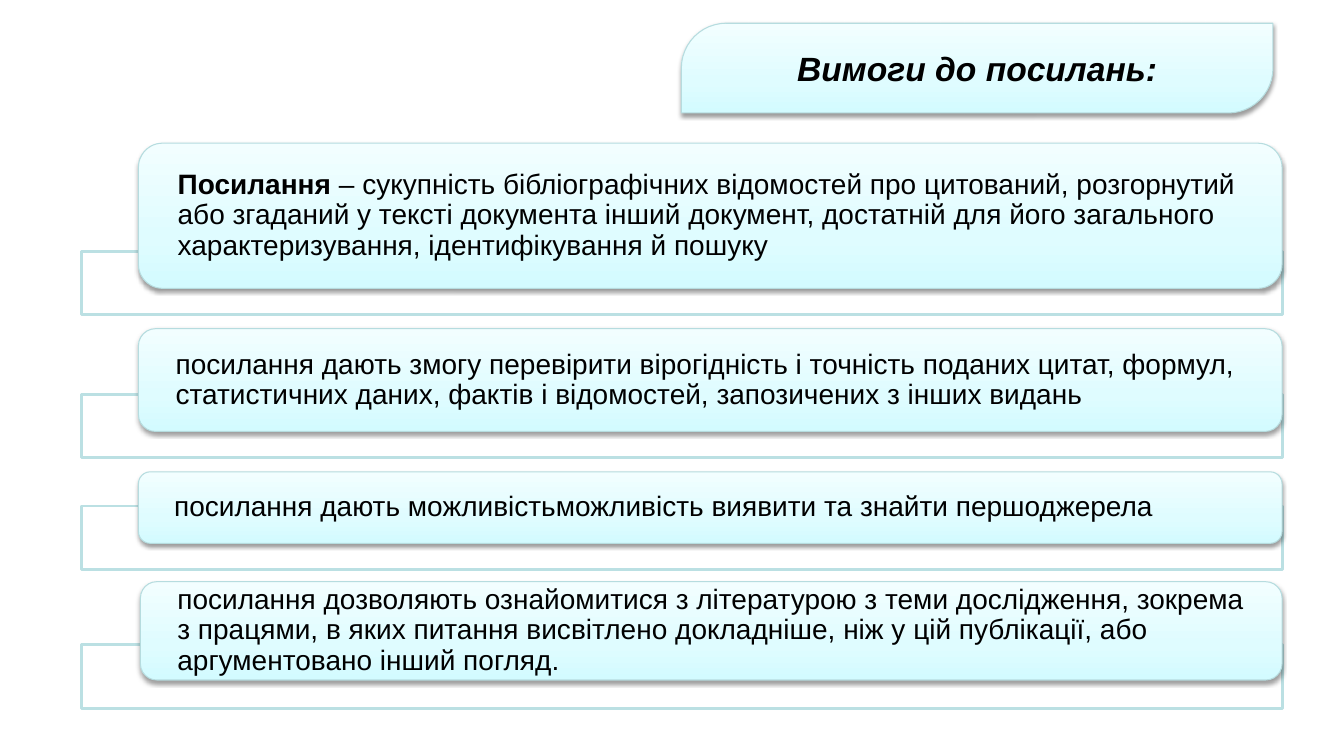
from dataclasses import dataclass

from lxml.etree import SubElement
from pptx import Presentation
from pptx.dml.color import RGBColor
from pptx.enum.shapes import MSO_SHAPE
from pptx.enum.text import MSO_ANCHOR, PP_ALIGN
from pptx.oxml.ns import qn
from pptx.util import Pt


@dataclass(frozen=True)
class Theme:
    font: str = "Arial"
    title_size: float = 24
    body_size: float = 20
    text: str = "000000"
    frame_fill: str = "FFFFFF"
    frame_line: str = "BBE0E3"
    card_line: str = "B6DCDF"
    # Gradient stops from bottom to top: percent and colour
    gradient: tuple = ((0, "D3FBFF"), (35, "DFFCFF"), (100, "F2FEFF"))


THEME = Theme()

TITLE = "Вимоги до посилань:"

# Each card: height, shift from its stacked place (x, y), runs (text, bold)
CARDS = [
    (103.7, (0, 0), [
        ("Посилання", True),
        (" – сукупність бібліографічних відомостей про цитований, розгорнутий "
         "або згаданий у тексті документа інший документ, достатній для його "
         "загального характеризування, ідентифікування й пошуку", False)]),
    (73.4, (0, 0), [
        ("посилання дають змогу перевірити вірогідність і точність поданих цитат, "
         "формул, статистичних даних, фактів і відомостей, запозичених з інших "
         "видань", False)]),
    (51.1, (0, 0), [
        ("посилання дають можливістьможливість виявити та знайти першоджерела",
         False)]),
    (70.2, (1.4, -1.4), [
        ("посилання дозволяють ознайомитися з літературою з теми дослідження, "
         "зокрема з працями, в яких питання висвітлено докладніше, ніж у цій "
         "публікації, або аргументовано інший погляд.", False)]),
]


def add_outlined(slide, kind, box, line_color, line_width):
    shape = slide.shapes.add_shape(kind, *(Pt(length) for length in box))
    shape.shadow.inherit = False
    shape.line.color.rgb = RGBColor.from_string(line_color)
    shape.line.width = Pt(line_width)
    return shape


def add_glossy(slide, kind, box):
    """Add a shape with the pale vertical gradient and a soft shadow below."""
    shape = add_outlined(slide, kind, box, THEME.card_line, 0.75)
    shape.fill.gradient()
    shape.fill.gradient_angle = 90
    properties = shape._element.spPr

    stops = properties.find(qn("a:gradFill")).find(qn("a:gsLst"))
    for stop in list(stops):
        stops.remove(stop)
    for percent, color in THEME.gradient:
        stop = SubElement(stops, qn("a:gs"), pos=str(percent * 1000))
        SubElement(stop, qn("a:srgbClr"), val=color)

    shadow = SubElement(properties.find(qn("a:effectLst")), qn("a:outerShdw"),
                        blurRad=str(Pt(3.1)), dist=str(Pt(1.6)),
                        dir="5400000", rotWithShape="0")
    shadow_color = SubElement(shadow, qn("a:srgbClr"), val="000000")
    SubElement(shadow_color, qn("a:alpha"), val="38000")
    return shape


def write(shape, runs, size, alignment, italic=False):
    frame = shape.text_frame
    frame.word_wrap = True
    frame.vertical_anchor = MSO_ANCHOR.MIDDLE
    paragraph = frame.paragraphs[0]
    paragraph.alignment = alignment
    for text, bold in runs:
        run = paragraph.add_run()
        run.text = text
        run.font.name = THEME.font
        run.font.size = Pt(size)
        run.font.bold = bold
        run.font.italic = italic
        run.font.color.rgb = RGBColor.from_string(THEME.text)
    return paragraph


def add_title(slide, box):
    shape = add_glossy(slide, MSO_SHAPE.ROUND_2_DIAG_RECTANGLE, box)
    shape.adjustments[0] = 0.5
    shape.adjustments[1] = 0
    write(shape, [(TITLE, True)], THEME.title_size, PP_ALIGN.CENTER, italic=True)


def add_frame(slide, box):
    shape = add_outlined(slide, MSO_SHAPE.RECTANGLE, box, THEME.frame_line, 2)
    shape.fill.solid()
    shape.fill.fore_color.rgb = RGBColor.from_string(THEME.frame_fill)
    fill_color = shape._element.spPr.find(qn("a:solidFill"))[0]
    SubElement(fill_color, qn("a:alpha"), val="90000")


def add_card(slide, box, runs):
    shape = add_glossy(slide, MSO_SHAPE.ROUNDED_RECTANGLE, box)
    frame = shape.text_frame
    frame.margin_left = frame.margin_right = Pt(23)
    frame.margin_top = frame.margin_bottom = 0
    paragraph = write(shape, runs, THEME.body_size, PP_ALIGN.LEFT)
    paragraph.line_spacing = 0.9


def add_card_list(slide, left, top, width):
    """Stack cards downwards, each overlapping the frame behind it."""
    indent, frame_height, overlap, gap = 40.6, 45.4, 26.6, 10
    for height, (shift_x, shift_y), runs in CARDS:
        frame_top = top + height - overlap
        add_frame(slide, (left, frame_top, width, frame_height))
        add_card(slide, (left + indent + shift_x, top + shift_y,
                         width - indent - shift_x, height), runs)
        top = frame_top + frame_height + gap


def main():
    presentation = Presentation()
    presentation.slide_width = Pt(960)
    presentation.slide_height = Pt(540)
    slide = presentation.slides.add_slide(presentation.slide_layouts[6])
    add_title(slide, (486.7, 16.6, 422.6, 64.1))
    add_card_list(slide, left=58.3, top=102.3, width=857.5)
    presentation.save("out.pptx")


if __name__ == "__main__":
    main()
